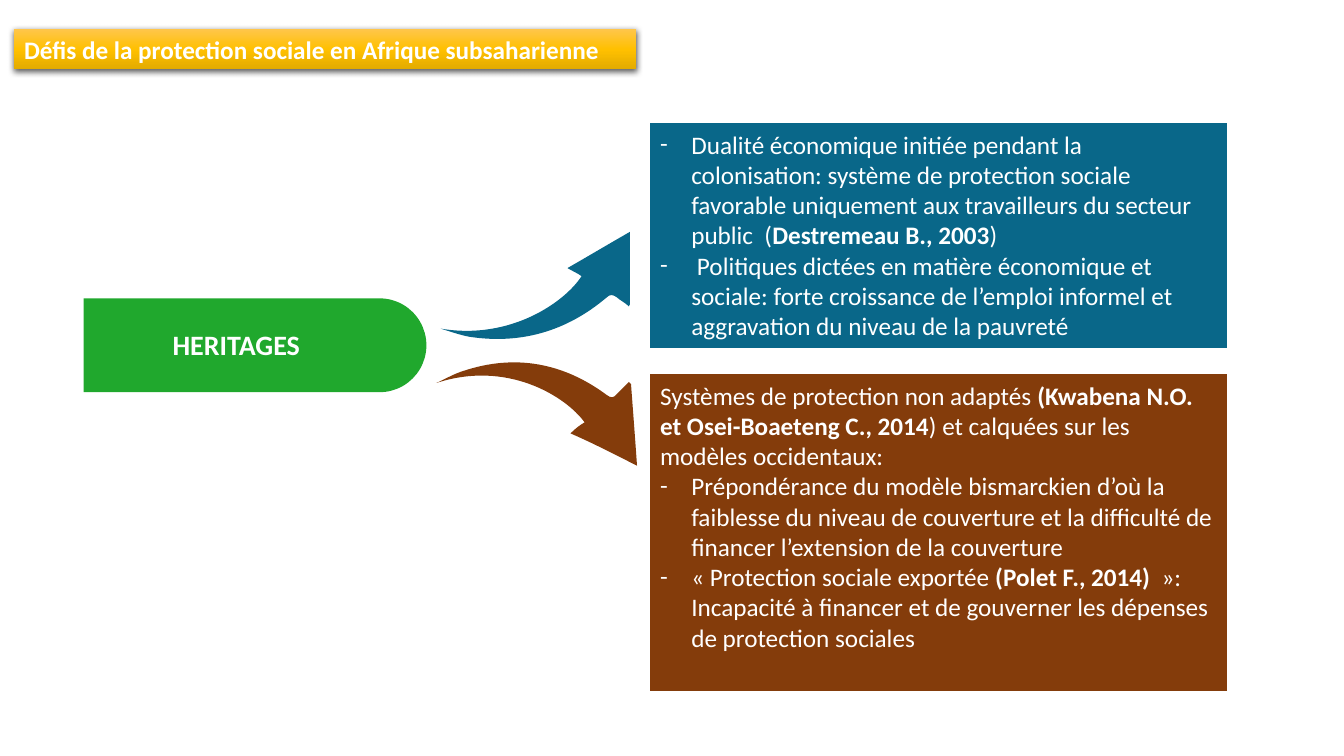
from dataclasses import dataclass
from math import cos, radians, sin

from lxml.etree import SubElement
from pptx import Presentation
from pptx.dml.color import RGBColor
from pptx.enum.shapes import MSO_SHAPE
from pptx.enum.text import MSO_ANCHOR, PP_ALIGN
from pptx.oxml.ns import qn
from pptx.util import Pt

EMU_PER_PX = 9144
BULLET_INDENT = 31


@dataclass(frozen=True)
class Theme:
    font: str = "Calibri"
    text: str = "FFFFFF"
    green: str = "20A82D"
    blue: str = "096789"
    brown: str = "843C0B"
    shadow: str = "000000"
    gold: tuple = ((0, "FFC64B"), (50, "FFC000"), (100, "E3AB00"))
    body_size: int = 18
    label_size: int = 20


THEME = Theme()

COLONIAL_LEGACY = [
    (True, [("Dualité économique initiée pendant la colonisation: système de protection "
             "sociale favorable uniquement aux travailleurs du secteur public  (", False),
            ("Destremeau B., 2003", True), (")", False)]),
    (True, [(" Politiques dictées en matière économique et sociale: forte croissance de "
             "l’emploi informel et aggravation du niveau de la pauvreté", False)]),
]
IMPORTED_MODELS = [
    (False, [("Systèmes de protection non adaptés ", False),
             ("(Kwabena N.O. et Osei-Boaeteng C., 2014", True),
             (") et calquées sur les modèles occidentaux:", False)]),
    (True, [("Prépondérance du modèle bismarckien d’où la faiblesse du niveau de couverture "
             "et la difficulté de financer l’extension de la couverture", False)]),
    (True, [("« Protection sociale exportée ", False), ("(Polet F., 2014) ", True),
            (" »: Incapacité à financer et de gouverner les dépenses de protection "
             "sociales", False)]),
]

UP_ARROW = [
    [(563, 266)],
    [(568, 269), (573, 271), (577, 274)], [(561, 299), (507, 338), (437, 326)],
    [(447, 329), (455, 332), (465, 334)], [(516, 342), (562, 329), (602, 295)],
    [(605, 292), (608, 292), (612, 295)], [(615, 298), (620, 300), (624, 304)],
    [(624, 303), (625, 302), (625, 302)], [(625, 278), (625, 255), (625, 230)],
    [(604, 242), (584, 254), (563, 266)],
]
DOWN_ARROW = [
    [(566, 430)],
    [(571, 425), (575, 422), (580, 419)], [(561, 393), (503, 357), (433, 380)],
    [(442, 376), (450, 371), (460, 368)], [(511, 351), (559, 360), (602, 392)],
    [(606, 395), (609, 395), (612, 391)], [(616, 387), (620, 383), (624, 379)],
    [(625, 380), (625, 380), (626, 381)], [(628, 407), (630, 434), (632, 462)],
    [(610, 451), (589, 440), (566, 430)],
]


def px(length):
    return round(length * EMU_PER_PX)


def add_block(slide, preset, box, color=None, line_width=None):
    shape = slide.shapes.add_shape(preset, *map(px, box))
    shape.shadow.inherit = False
    if color:
        shape.fill.solid()
        shape.fill.fore_color.rgb = RGBColor.from_string(color)
    if line_width:
        shape.line.color.rgb = RGBColor.from_string(color)
        shape.line.width = Pt(line_width)
        SubElement(shape.line._get_or_add_ln(), qn("a:miter"), lim="800000")
    else:
        shape.line.fill.background()
    return shape


def style_paragraph(paragraph, size, bold=None):
    font = paragraph.font
    font.name = THEME.font
    font.size = Pt(size)
    font.color.rgb = RGBColor.from_string(THEME.text)
    font.bold = bold


def add_dash(paragraph):
    properties = paragraph._p.get_or_add_pPr()
    properties.set("marL", str(px(BULLET_INDENT)))
    properties.set("indent", str(px(-BULLET_INDENT)))
    typeface = properties.makeelement(qn("a:buFont"), {"typeface": THEME.font})
    bullet = properties.makeelement(qn("a:buChar"), {"char": "-"})
    properties.insert(0, typeface)
    properties.insert(1, bullet)


def set_label(shape, text, size, alignment):
    frame = shape.text_frame
    frame.word_wrap = True
    frame.vertical_anchor = MSO_ANCHOR.MIDDLE
    paragraph = frame.paragraphs[0]
    paragraph.text = text
    paragraph.alignment = alignment
    style_paragraph(paragraph, size, bold=True)


def add_panel(slide, box, color, content):
    frame = add_block(slide, MSO_SHAPE.RECTANGLE, box, color, 0.75).text_frame
    frame.word_wrap = True
    frame.vertical_anchor = MSO_ANCHOR.TOP
    for index, (dashed, runs) in enumerate(content):
        paragraph = frame.add_paragraph() if index else frame.paragraphs[0]
        paragraph.alignment = PP_ALIGN.LEFT
        style_paragraph(paragraph, THEME.body_size)
        if dashed:
            add_dash(paragraph)
        for text, bold in runs:
            run = paragraph.add_run()
            run.text = text
            run.font.bold = bold


def turn_back(point, box, rotation):
    left, top, width, height = box
    x, y = point[0] - left - width / 2, point[1] - top - height / 2
    cosine, sine = cos(radians(rotation)), sin(radians(rotation))
    return px(width / 2 + x * cosine + y * sine), px(height / 2 + y * cosine - x * sine)


def add_curved_arrow(slide, box, rotation, outline, color):
    left, top, width, height = map(px, box)
    segments = [[turn_back(point, box, rotation) for point in segment]
                for segment in outline]
    builder = slide.shapes.build_freeform(*segments[0][0])
    builder.add_line_segments([segment[-1] for segment in segments[1:]], close=True)
    arrow = builder.convert_to_shape()
    arrow.left, arrow.top, arrow.width, arrow.height = left, top, width, height
    arrow.rotation = rotation
    arrow.shadow.inherit = False
    arrow.fill.solid()
    arrow.fill.fore_color.rgb = RGBColor.from_string(color)
    arrow.line.fill.background()

    contour = arrow._element.spPr.find(".//" + qn("a:path"))
    for command in list(contour):
        contour.remove(command)
    contour.set("w", str(width))
    contour.set("h", str(height))
    for segment in segments:
        name = "a:moveTo" if len(segment) == 1 else "a:cubicBezTo"
        command = SubElement(contour, qn(name))
        for x, y in segment:
            SubElement(command, qn("a:pt"), x=str(x), y=str(y))
    SubElement(contour, qn("a:close"))


def add_title(slide, box, text):
    title = add_block(slide, MSO_SHAPE.RECTANGLE, box)
    title.fill.gradient()
    title.fill.gradient_angle = 270
    properties = title._element.spPr
    stops = properties.find(".//" + qn("a:gsLst"))
    for stop in list(stops):
        stops.remove(stop)
    for position, color in THEME.gold:
        stop = SubElement(stops, qn("a:gs"), pos=str(position * 1000))
        SubElement(stop, qn("a:srgbClr"), val=color)
    shadow = SubElement(properties.find(qn("a:effectLst")), qn("a:outerShdw"),
                        blurRad=str(Pt(4.5)), dist=str(Pt(1.5)), dir="5400000",
                        algn="ctr", rotWithShape="0")
    shade = SubElement(shadow, qn("a:srgbClr"), val=THEME.shadow)
    SubElement(shade, qn("a:alpha"), val="63000")
    set_label(title, text, THEME.body_size, PP_ALIGN.LEFT)


def add_source_tab(slide, box, label_box, text):
    tab = add_block(slide, MSO_SHAPE.ROUND_2_SAME_RECTANGLE, box, THEME.green, 2.25)
    tab.adjustments[0] = 0
    tab.adjustments[1] = 0.5
    tab.rotation = 270
    label = slide.shapes.add_textbox(*map(px, label_box))
    set_label(label, text, THEME.label_size, PP_ALIGN.CENTER)


def main():
    presentation = Presentation()
    presentation.slide_height = px(750)
    presentation.slide_width = presentation.slide_height * 16 // 9
    slide = presentation.slides.add_slide(presentation.slide_layouts[6])
    add_source_tab(slide, (208, 174, 90, 337), (66, 320, 337, 44), "HERITAGES")
    add_curved_arrow(slide, (433, 254, 206, 82), 345.8, UP_ARROW, THEME.blue)
    add_curved_arrow(slide, (431, 355, 209, 92), 7.9, DOWN_ARROW, THEME.brown)
    add_panel(slide, (645, 372, 572, 313), THEME.brown, IMPORTED_MODELS)
    add_panel(slide, (645, 123, 572, 222), THEME.blue, COLONIAL_LEGACY)
    add_title(slide, (14, 29, 617, 40),
              "Défis de la protection sociale en Afrique subsaharienne")
    presentation.save("out.pptx")


if __name__ == "__main__":
    main()
